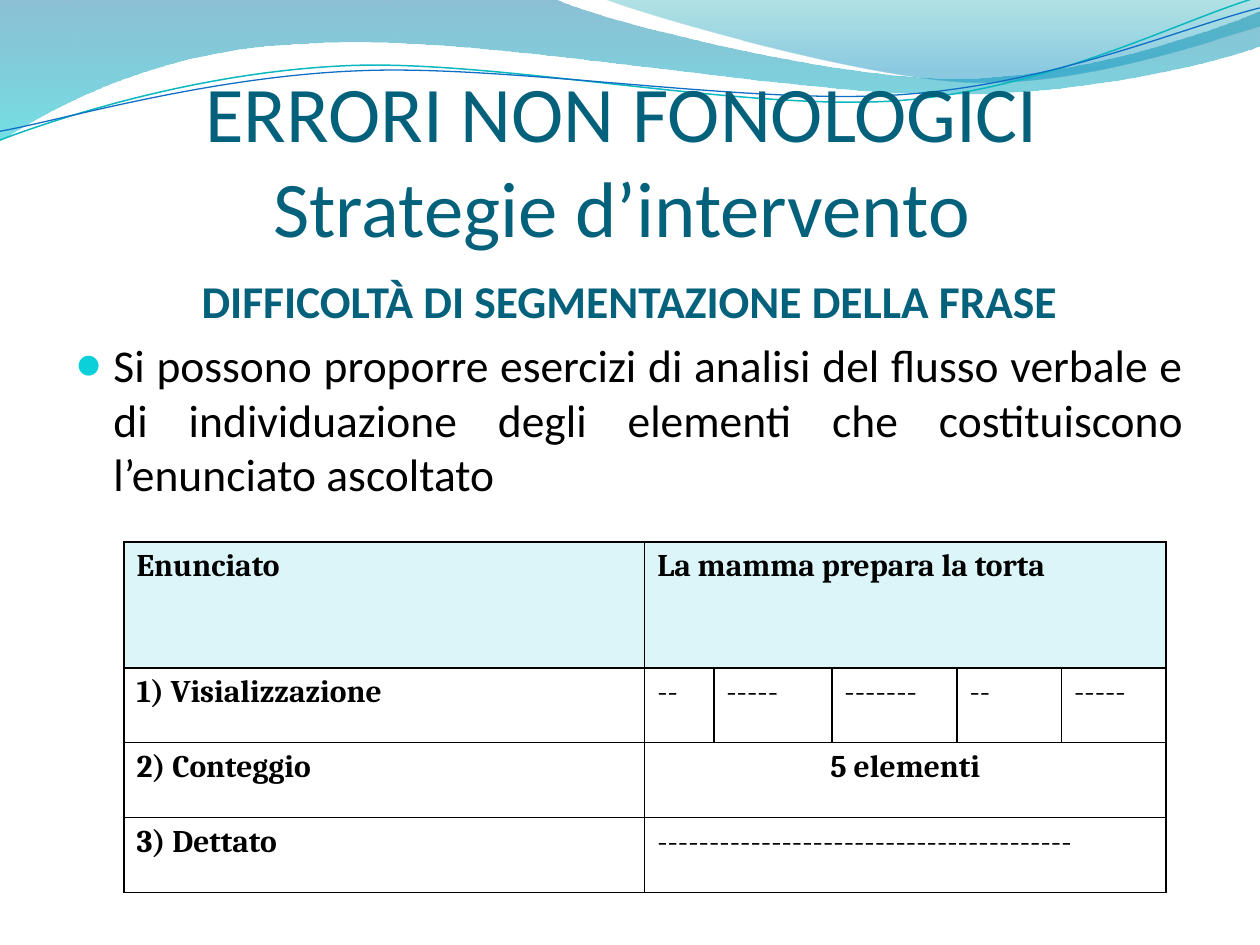
from dataclasses import dataclass

from lxml import etree
from pptx import Presentation
from pptx.dml.color import RGBColor
from pptx.enum import text
from pptx.oxml import ns
from pptx.util import Pt


@dataclass(frozen=True)
class Theme:
    heading: str = "04617B"
    ink: str = "000000"
    bullet: str = "0BD0D9"
    header_fill: str = "DBF5F9"
    teal_line: str = "0AB8BF"
    blue_line: str = "0F6FC6"
    wide_wave: tuple = ((0, "0074A1", 45), (1, "00C6CF", 55))
    right_wave: tuple = ((0, "00A1A9", 30), (0.8, "008BBF", 45))
    font: str = "Calibri"
    table_font: str = "Cambria"
    title_size: float = 45
    body_size: float = 26
    table_size: float = 18


T = Theme()
ALIGN = text.PP_ALIGN

WIDE_WAVE = [
    (0, 0), (317, -0.7), (343, 12, 478, 45, 546, 45), (614, 45, 690, 19, 720, 6.5),
    (721, 26), (708, 32, 626, 55, 537, 54), (448, 54, 275, 20, 185, 24.5),
    (93, 26, 33, 60, -0.7, 81), (0, 0),
]
RIGHT_WAVE = [
    (345, -0.7), (366, 8, 491, 44.5, 553.5, 47), (618, 49.5, 692, 23, 720, 15),
    (720, 0), (345, -0.7),
]
TEAL_CURVE = [
    (0, 80), (34.5, 67, 114, 41, 199.5, 37.5), (284.5, 34, 427, 64, 513.5, 57.5),
    (600, 51, 675.5, 11, 718.5, -1.5),
]
BLUE_CURVE = [
    (0, 75), (34, 69, 118, 44, 204, 40.5), (290, 36.5, 430, 60.5, 516, 54),
    (602, 48, 677.5, 15, 720, 4.5),
]

COLUMNS = [297.5, 39.5, 67.5, 71.5, 59.7, 59.7]
ROWS = [72, 42.8, 42.8, 42.8]
CELLS = [
    ["Enunciato", "La mamma prepara la torta"],
    ["1) Visializzazione", "--", "-----", "-------", "--", "-----"],
    ["2) Conteggio", "5 elementi"],
    ["3) Dettato", "-" * 40],
]


def rgb(color):
    return RGBColor.from_string(color)


def sub(parent, tag, **attrs):
    return etree.SubElement(parent, ns.qn(tag), attrs)


def add_text(p, content, size=T.body_size, font=T.font, color=T.ink, bold=False, align=None):
    p.alignment = align
    for i, line in enumerate(content.split("\n")):
        if i:
            p.add_line_break()
        r = p.add_run()
        r.text = line
        r.font.size = Pt(size)
        r.font.name = font
        r.font.bold = bold
        r.font.color.rgb = rgb(color)


def place(sp, left, top, width, height):
    sp.left, sp.top, sp.width, sp.height = Pt(left), Pt(top), Pt(width), Pt(height)
    tf = sp.text_frame
    tf.word_wrap = True
    tf.auto_size = text.MSO_AUTO_SIZE.NONE
    return tf


def bend(sp, segments):
    lines = iter(list(sp.element.iter(ns.qn("a:lnTo"))))
    for segment in segments[1:]:
        first = next(lines)
        if len(segment) == 2:
            continue
        curve = etree.Element(ns.qn("a:cubicBezTo"))
        first.addprevious(curve)
        for ln in (first, next(lines), next(lines)):
            curve.append(ln[0])
            ln.getparent().remove(ln)


def add_outline(s, segments, closed):
    points = [(Pt(seg[k]), Pt(seg[k + 1])) for seg in segments for k in range(0, len(seg), 2)]
    builder = s.shapes.build_freeform(*points[0])
    builder.add_line_segments(points[1:], close=closed)
    sp = builder.convert_to_shape()
    bend(sp, segments)
    sp.shadow.inherit = False
    s.shapes.title.element.addprevious(sp.element)
    return sp


def add_wave(s, segments, stops):
    sp = add_outline(s, segments, True)
    sp.line.fill.background()
    sp.fill.gradient()
    sp.fill.gradient_angle = 270
    for stop, (position, color, _) in zip(sp.fill.gradient_stops, stops):
        stop.position = position
        stop.color.rgb = rgb(color)
    for clr, (_, _, opacity) in zip(sp.element.iter(ns.qn("a:srgbClr")), stops):
        sub(clr, "a:alpha", val=str(opacity * 1000))


def add_curve(s, segments, color, width):
    sp = add_outline(s, segments, False)
    sp.fill.background()
    sp.line.color.rgb = rgb(color)
    sp.line.width = Pt(width)


def indent(p, bullet=None):
    p.space_before = Pt(T.body_size * 0.2)
    pPr = p._p.get_or_add_pPr()
    pPr.set("marL", str(Pt(21.6)))
    pPr.set("indent", str(-Pt(21.6)))
    if bullet is None:
        sub(pPr, "a:buNone")
        return
    sub(sub(pPr, "a:buClr"), "a:srgbClr", val=T.bullet)
    sub(pPr, "a:buSzPct", val="95000")
    sub(pPr, "a:buFont", typeface=T.font)
    sub(pPr, "a:buChar", char=bullet)


def add_title(s):
    tf = place(s.shapes.title, 31.3, 54.7, 648, 90)
    tf.vertical_anchor = text.MSO_ANCHOR.BOTTOM
    tf.margin_left = tf.margin_right = tf.margin_bottom = 0
    tf.margin_top = Pt(3.6)
    add_text(tf.paragraphs[0], "ERRORI NON FONOLOGICI\nStrategie d’intervento",
             size=T.title_size, color=T.heading, align=ALIGN.CENTER)


def add_body(s):
    tf = place(s.placeholders[1], 36, 152.6, 648, 345.6)
    p = tf.paragraphs[0]
    add_text(p, "DIFFICOLTÀ DI SEGMENTAZIONE DELLA FRASE",
             color=T.heading, bold=True, align=ALIGN.CENTER)
    indent(p)
    p = tf.add_paragraph()
    add_text(p, "Si possono proporre esercizi di analisi del flusso verbale e di individuazione "
                "degli elementi che costituiscono l’enunciato ascoltato ", align=ALIGN.JUSTIFY)
    indent(p, "●")


def format_cell(cell, fill):
    tcPr = cell._tc.get_or_add_tcPr()
    for side in "LRTB":
        ln = sub(tcPr, f"a:ln{side}", w=str(Pt(1)))
        sub(sub(ln, "a:solidFill"), "a:srgbClr", val=T.ink)
    if fill:
        cell.fill.solid()
        cell.fill.fore_color.rgb = rgb(fill)
    else:
        cell.fill.background()


def add_exercise_table(s):
    table = s.shapes.add_table(len(ROWS), len(COLUMNS), Pt(70.9), Pt(309.6),
                               Pt(sum(COLUMNS)), Pt(sum(ROWS))).table
    table.first_row = table.horz_banding = False
    for column, width in zip(table.columns, COLUMNS):
        column.width = Pt(width)
    for i, (height, contents) in enumerate(zip(ROWS, CELLS)):
        table.rows[i].height = Pt(height)
        for j in range(len(COLUMNS)):
            format_cell(table.cell(i, j), T.header_fill if i == 0 else None)
        if len(contents) == 2:
            table.cell(i, 1).merge(table.cell(i, len(COLUMNS) - 1))
        for j, content in enumerate(contents):
            add_text(table.cell(i, j).text_frame.paragraphs[0], content,
                     size=T.table_size, font=T.table_font, bold=not content.startswith("-"),
                     align=ALIGN.CENTER if content == "5 elementi" else ALIGN.LEFT)


def main():
    prs = Presentation()
    prs.slide_width, prs.slide_height = Pt(720), Pt(540)
    s = prs.slides.add_slide(prs.slide_layouts[1])
    add_wave(s, WIDE_WAVE, T.wide_wave)
    add_wave(s, RIGHT_WAVE, T.right_wave)
    add_curve(s, TEAL_CURVE, T.teal_line, 0.85)
    add_curve(s, BLUE_CURVE, T.blue_line, 0.75)
    add_title(s)
    add_body(s)
    add_exercise_table(s)
    prs.save("out.pptx")


if __name__ == "__main__":
    main()
